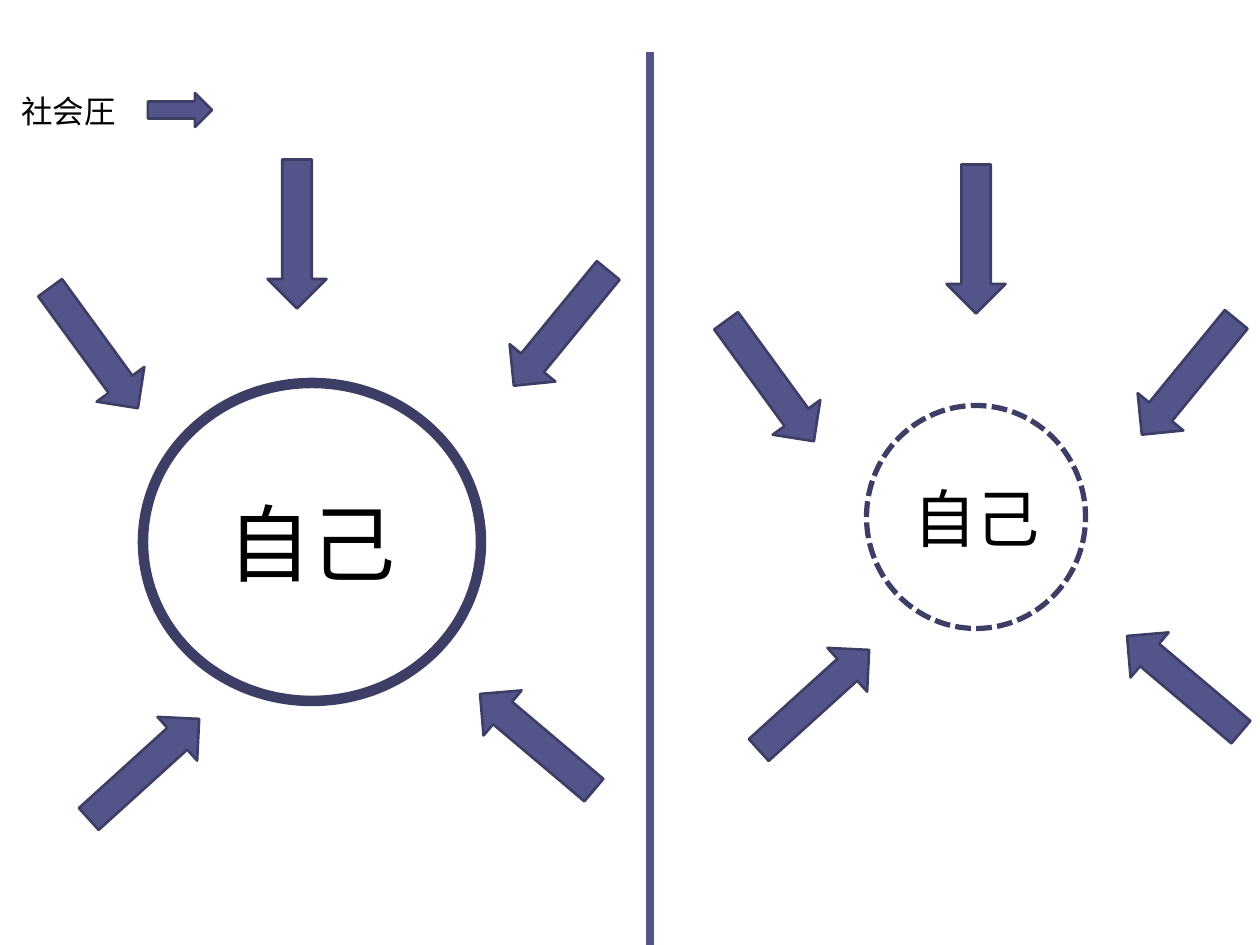
from typing import NamedTuple

from pptx import Presentation
from pptx import util as u
from pptx.dml.color import RGBColor
from pptx.enum import dml, shapes, text
from pptx.oxml import parse_xml
from pptx.oxml.ns import nsdecls

INDIGO = RGBColor(0x53, 0x54, 0x8A)
DARK_INDIGO = RGBColor(0x3D, 0x3E, 0x66)
BLACK = RGBColor(0, 0, 0)
FONT = "Cambria"
ARROW_SIZE = (149, 59)
LEGEND_ARROW_SIZE = (64, 34)
ARROW_ANGLES = (90, 129.3, 220.2, 317.8, 53.9)


class Self(NamedTuple):
    center: tuple[int, int]
    size: tuple[int, int]
    line_width: int
    font_size: int
    dash: dml.MSO_LINE | None
    arrow_centers: tuple[tuple[int, int], ...]


SELVES = (
    Self((312, 542), (338, 318), 6, 48, None,
         ((297, 234), (561, 328), (537, 742), (144, 769), (94, 348))),
    Self((976, 517), (219, 223), 3, 36, dml.MSO_LINE.SQUARE_DOT,
         ((976, 239), (1189, 377), (1184, 684), (814, 700), (770, 381))),
)


def px(length: float) -> u.Emu:
    return u.Emu(round(length * 914400 / 126))


def add_centered(page, kind, center: tuple[int, int], size: tuple[int, int], line_width: float):
    (x, y), (width, height) = center, size
    shape = page.shapes.add_shape(
        kind, px(x - width / 2), px(y - height / 2), px(width), px(height))
    shape.shadow.inherit = False
    shape.line.color.rgb = DARK_INDIGO
    shape.line.width = u.Pt(line_width)
    return shape


def write(box, content: str, *, size: int, align=text.PP_ALIGN.LEFT,
          anchor=text.MSO_ANCHOR.TOP, wrap: bool = True) -> None:
    frame = box.text_frame
    frame.word_wrap = wrap
    frame.vertical_anchor = anchor
    para = frame.paragraphs[0]
    para.alignment = align
    span = para.add_run()
    span.text = content
    span.font.name = FONT
    span.font.size = u.Pt(size)
    span.font.color.rgb = BLACK


def add_arrow(page, center: tuple[int, int], size: tuple[int, int], angle: float = 0) -> None:
    arrow = add_centered(page, shapes.MSO_SHAPE.RIGHT_ARROW, center, size, 1.5)
    arrow.fill.solid()
    arrow.fill.fore_color.rgb = INDIGO
    arrow.rotation = angle


def add_self(page, item: Self) -> None:
    circle = add_centered(page, shapes.MSO_SHAPE.OVAL, item.center, item.size, item.line_width)
    circle.fill.background()
    if item.dash is not None:
        circle.line.dash_style = item.dash
    write(circle, "自己", size=item.font_size, align=text.PP_ALIGN.CENTER,
          anchor=text.MSO_ANCHOR.MIDDLE)
    for center, angle in zip(item.arrow_centers, ARROW_ANGLES):
        add_arrow(page, center, ARROW_SIZE, angle)


def add_divider(page) -> None:
    divider = page.shapes.add_connector(
        shapes.MSO_CONNECTOR.STRAIGHT, px(650), px(52), px(650), px(945))
    divider.line.color.rgb = INDIGO
    divider.line.width = u.Pt(4.5)
    divider.element.spPr.append(parse_xml(f"<a:effectLst {nsdecls('a')}/>"))


def add_legend(page) -> None:
    label = page.shapes.add_textbox(px(9), px(86), px(121), px(50))
    write(label, "社会圧", size=18, wrap=False)
    label.text_frame.auto_size = text.MSO_AUTO_SIZE.SHAPE_TO_FIT_TEXT
    add_arrow(page, (180, 110), LEGEND_ARROW_SIZE)


def main() -> None:
    deck = Presentation()
    deck.slide_width, deck.slide_height = px(1260), px(945)
    page = deck.slides.add_slide(deck.slide_layouts[6])
    for item in SELVES:
        add_self(page, item)
    add_divider(page)
    add_legend(page)
    deck.save("out.pptx")


if __name__ == "__main__":
    main()
